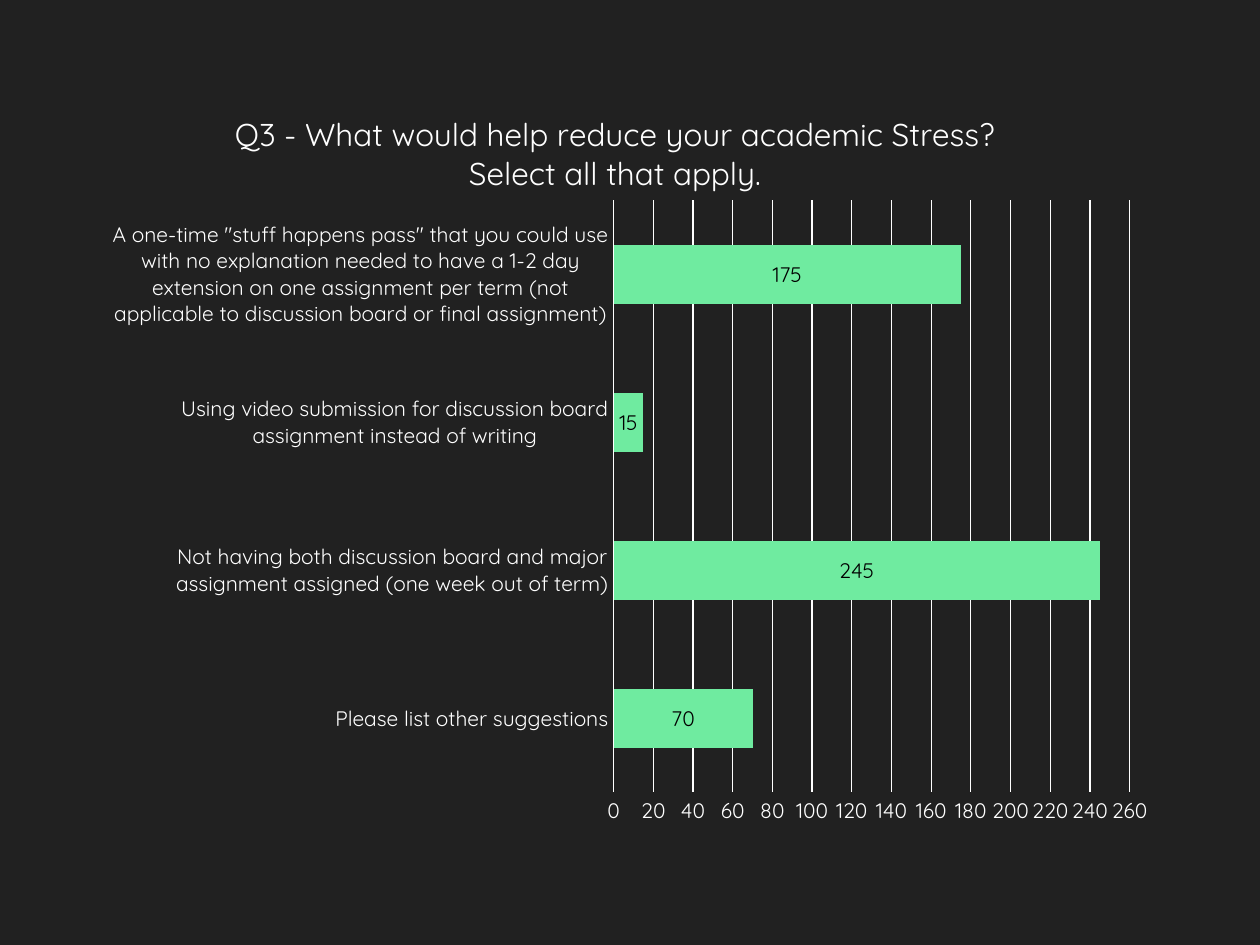
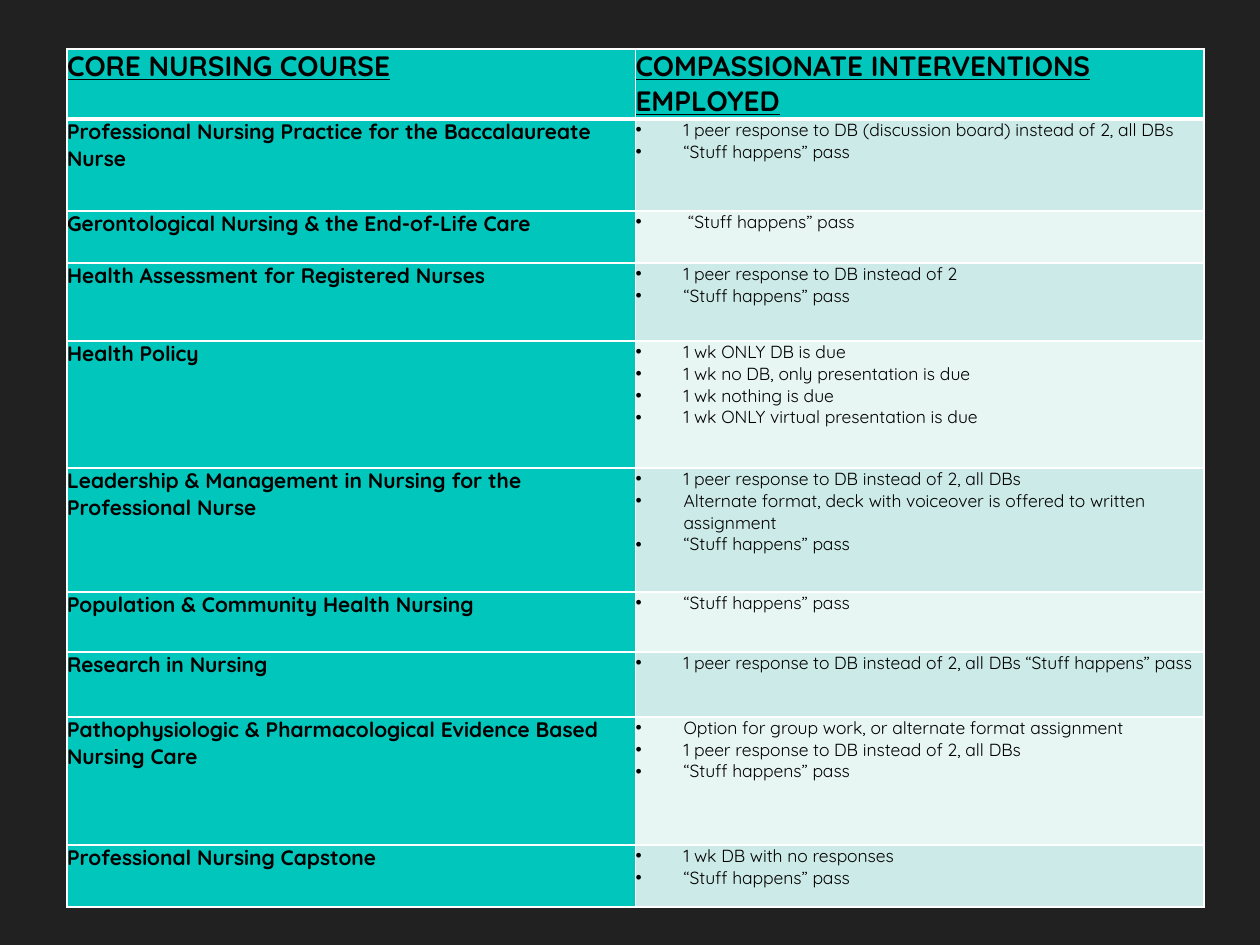
from typing import NamedTuple

from lxml import etree
from pptx import Presentation
from pptx import util as u
from pptx.chart.data import CategoryChartData
from pptx.dml.color import RGBColor
from pptx.enum import chart as ch
from pptx.oxml import parse_xml
from pptx.oxml.ns import nsdecls, qn

PX = 914400 / 126
FONT = "Quicksand"

DARK = RGBColor(0x21, 0x21, 0x21)
WHITE = RGBColor(0xFF, 0xFF, 0xFF)
BLACK = RGBColor(0x00, 0x00, 0x00)
MINT = RGBColor(0x6F, 0xEB, 0xA0)
TEAL = RGBColor(0x00, 0xC6, 0xBB)
BANDS = (RGBColor(0xCC, 0xEA, 0xE7), RGBColor(0xE7, 0xF5, 0xF3))


class Answer(NamedTuple):
    label: str
    votes: int


class Course(NamedTuple):
    height: int
    name: str
    interventions: list[str]


TITLE = ("Q3 - What would help reduce your academic Stress?\n"
         "Select all that apply.")
ANSWERS = [
    Answer("Please list other suggestions", 70),
    Answer("Not having both discussion board and major assignment assigned "
           "(one week out of term)", 245),
    Answer("Using video submission for discussion board assignment instead "
           "of writing", 15),
    Answer('A one-time "stuff happens pass" that you could use with no '
           "explanation needed to have a 1-2 day extension on one assignment "
           "per term (not applicable to discussion board or final "
           "assignment)", 175),
]

PASS = "“Stuff happens” pass"
ONE_PEER = "1 peer response to DB instead of 2"
ONE_PEER_ALL = f"{ONE_PEER}, all DBs"
HEADER_HEIGHT = 70
HEADERS = ("CORE NURSING COURSE", "COMPASSIONATE INTERVENTIONS EMPLOYED")
COURSES = [
    Course(92, "Professional Nursing Practice for the Baccalaureate Nurse",
           ["1 peer response to DB (discussion board) instead of 2, all DBs",
            PASS]),
    Course(52, "Gerontological Nursing & the End-of-Life Care", [f" {PASS}"]),
    Course(78, "Health Assessment for Registered Nurses", [ONE_PEER, PASS]),
    Course(127, "Health Policy",
           ["1 wk ONLY DB is due", "1 wk no DB, only presentation is due",
            "1 wk nothing is due", "1 wk ONLY virtual presentation is due"]),
    Course(124, "Leadership & Management in Nursing for the Professional Nurse",
           [ONE_PEER_ALL,
            "Alternate format, deck with voiceover is offered to written "
            "assignment", PASS]),
    Course(60, "Population & Community Health Nursing", [PASS]),
    Course(65, "Research in Nursing", [f"{ONE_PEER_ALL} {PASS}"]),
    Course(128,
           "Pathophysiologic & Pharmacological Evidence Based Nursing Care",
           ["Option for group work, or alternate format assignment",
            ONE_PEER_ALL, PASS]),
    Course(62, "Professional Nursing Capstone",
           ["1 wk DB with no responses", PASS]),
]


def px(n: float) -> u.Emu:
    return u.Emu(round(n * PX))


def set_font(font, size: int, color: RGBColor, bold: bool = False) -> None:
    font.name = FONT
    font.size = u.Pt(size)
    font.bold = bold
    font.color.rgb = color


def set_line(line) -> None:
    line.color.rgb = WHITE
    line.width = u.Pt(0.75)


def layout_xml(target: str, **fractions: float):
    """Manual chart layout, in fractions of the chart area."""
    inner = f'<c:layoutTarget val="{target}"/>' if target else ""
    modes = '<c:xMode val="edge"/><c:yMode val="edge"/>'
    values = "".join(f'<c:{k} val="{v}"/>' for k, v in fractions.items())
    return parse_xml(f'<c:layout {nsdecls("c")}><c:manualLayout>{inner}'
                     f'{modes}{values}</c:manualLayout></c:layout>')


def set_layout(parent, layout, index: int) -> None:
    for old in parent.findall(qn("c:layout")):
        parent.remove(old)
    parent.insert(index, layout)


def add_survey_chart(slide) -> None:
    data = CategoryChartData()
    data.categories = [a.label for a in ANSWERS]
    data.add_series("Series 1", [a.votes for a in ANSWERS])
    chart = slide.shapes.add_chart(
        ch.XL_CHART_TYPE.BAR_STACKED, px(105), px(86), px(1051), px(757),
        data).chart
    set_font(chart.font, 10, WHITE)
    chart.has_legend = False

    title = chart.chart_title
    title.text_frame.text = TITLE
    for p in title.text_frame.paragraphs:
        for r in p.runs:
            set_font(r.font, 18, WHITE)
    title.include_in_layout = False
    set_layout(title._element, layout_xml("", x=0.12, y=0.03), 1)
    set_layout(chart._chartSpace.chart.plotArea,
               layout_xml("inner", x=0.484, y=0.151, w=0.491, h=0.782), 0)

    for axis in (chart.category_axis, chart.value_axis):
        axis.major_tick_mark = axis.minor_tick_mark = ch.XL_TICK_MARK.NONE
        set_font(axis.tick_labels.font, 12, WHITE)
    set_line(chart.category_axis.format.line)
    values = chart.value_axis
    values.minimum_scale, values.maximum_scale = 0, 260
    values.major_unit = 20
    values.format.line.fill.background()
    set_line(values.major_gridlines.format.line)

    plot = chart.plots[0]
    plot.gap_width, plot.overlap = 150, 100
    plot.vary_by_categories = False
    bars = plot.series[0]
    bars.format.fill.solid()
    bars.format.fill.fore_color.rgb = MINT
    labels = bars.data_labels
    labels.show_value = True
    labels.position = ch.XL_LABEL_POSITION.CENTER
    set_font(labels.font, 12, BLACK)


def add_bullet(p) -> None:
    pPr = p._p.get_or_add_pPr()
    indent = px(48)
    pPr.set("marL", str(indent))
    pPr.set("indent", str(-indent))
    etree.SubElement(pPr, qn("a:buFont"), typeface="Arial")
    etree.SubElement(pPr, qn("a:buChar"), char="•")


def set_borders(cell, top: int, bottom: int) -> None:
    tcPr = cell._tc.get_or_add_tcPr()
    widths = {"lnL": 1, "lnR": 1, "lnT": top, "lnB": bottom}
    for i, (side, width) in enumerate(widths.items()):
        tcPr.insert(i, parse_xml(
            f'<a:{side} {nsdecls("a")} w="{u.Pt(width)}"><a:solidFill>'
            f'<a:srgbClr val="{WHITE}"/></a:solidFill></a:{side}>'))


def fill_cell(cell, lines: list[str], fill: RGBColor, size: int,
              bold: bool = True, underline: bool = False,
              bullets: bool = False) -> None:
    cell.margin_left = cell.margin_right = 0
    cell.margin_top = cell.margin_bottom = 0
    cell.fill.solid()
    cell.fill.fore_color.rgb = fill
    cell.text_frame.text = "\n".join(lines)
    for p in cell.text_frame.paragraphs:
        if bullets:
            add_bullet(p)
        for r in p.runs:
            set_font(r.font, size, BLACK, bold)
            r.font.underline = underline


def add_course_table(slide) -> None:
    heights = [HEADER_HEIGHT] + [c.height for c in COURSES]
    table = slide.shapes.add_table(
        len(heights), 2, px(67), px(49), px(1137), px(sum(heights))).table
    table.first_row = table.horz_banding = False
    for row, height in zip(table.rows, heights):
        row.height = px(height)

    for col, header in enumerate(HEADERS):
        fill_cell(table.cell(0, col), [header], TEAL, 16, underline=True)
    for i, course in enumerate(COURSES):
        fill_cell(table.cell(i + 1, 0), [course.name], TEAL, 12)
        fill_cell(table.cell(i + 1, 1), course.interventions,
                  BANDS[i % 2], 10, bold=False, bullets=True)
    for i, row in enumerate(table.rows):
        for cell in row.cells:
            set_borders(cell, top=3 if i == 1 else 1,
                        bottom=3 if i == 0 else 1)


def main() -> None:
    prs = Presentation()
    prs.slide_width, prs.slide_height = px(1260), px(945)
    background = prs.slide_master.background.fill
    background.solid()
    background.fore_color.rgb = DARK
    blank = prs.slide_layouts[6]
    for draw in (add_survey_chart, add_course_table):
        draw(prs.slides.add_slide(blank))
    prs.save("out.pptx")


if __name__ == "__main__":
    main()
